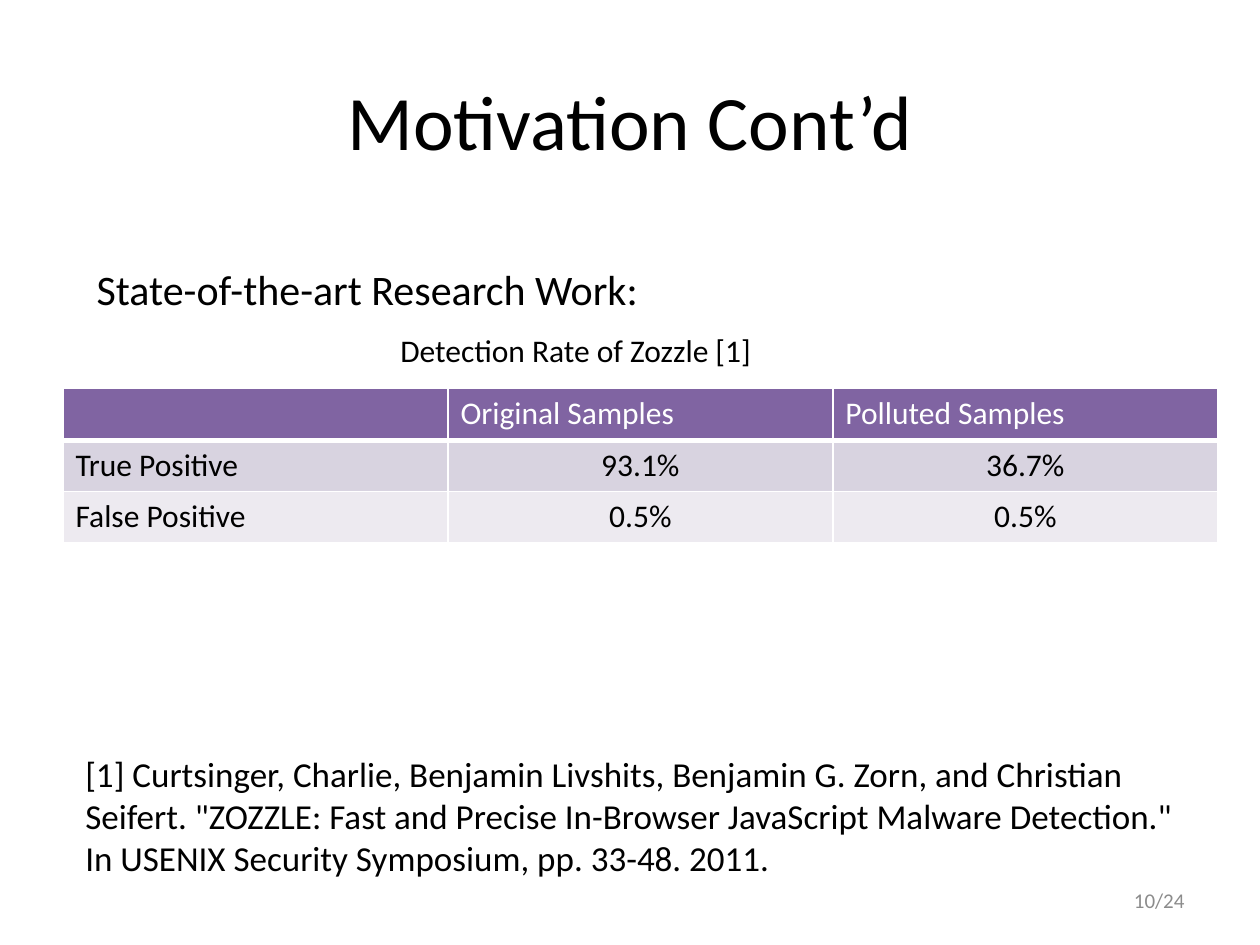
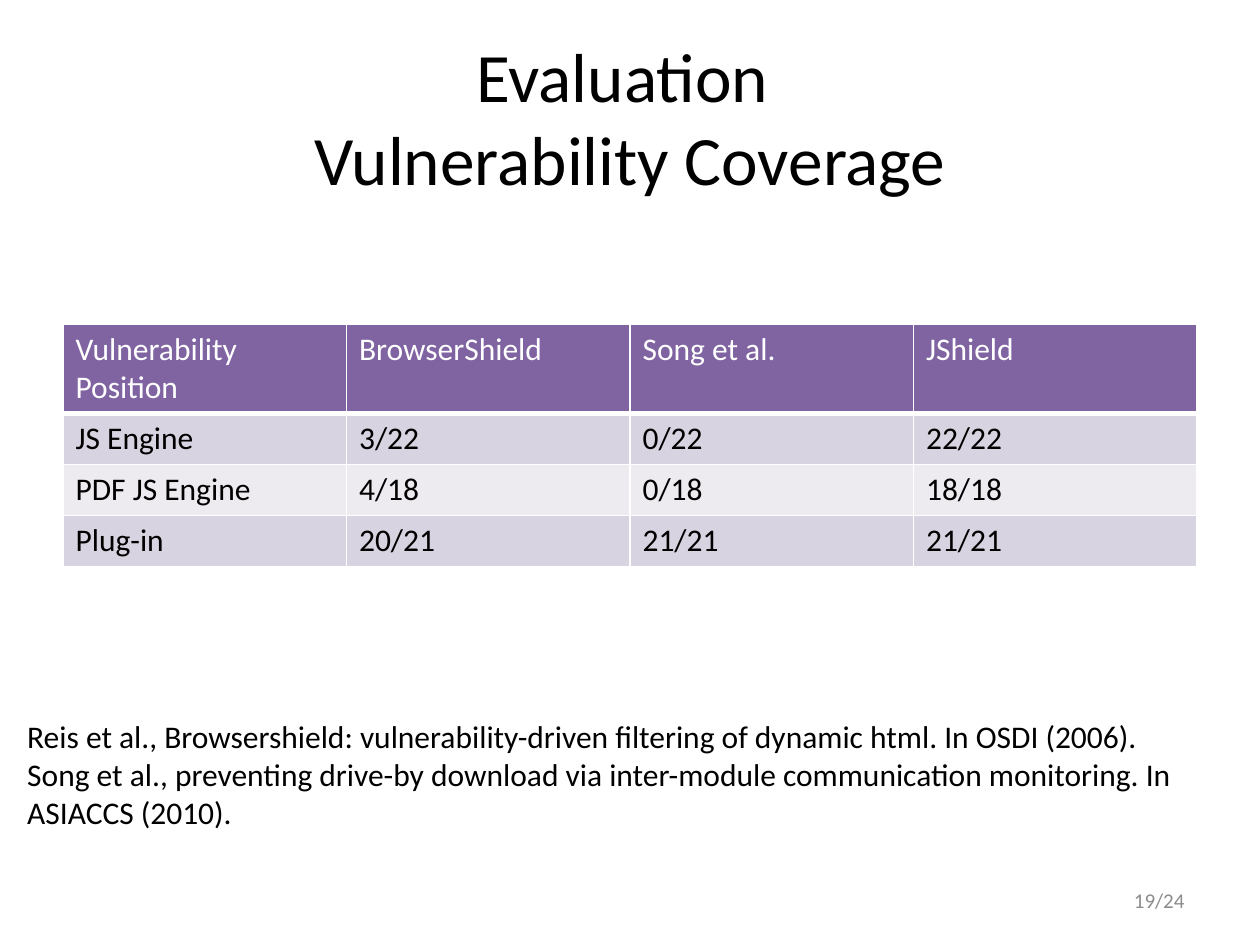
from lxml.etree import SubElement
from pptx import Presentation
from pptx.dml.color import RGBColor
from pptx.enum.text import MSO_ANCHOR as Anchor, PP_ALIGN as Align
from pptx.oxml.ns import qn
from pptx.util import Cm, Pt

FONT = "Calibri"
BLACK, WHITE, GREY = "000000", "FFFFFF", "8C8C8C"
HEADER_FILL, BAND_FILLS = "8064A2", ("D8D3E0", "EDEAF0")
ROW_HEIGHT = 1.03
BORDERS = ("lnL", "lnR", "lnT", "lnB")

# Content: boxes and tables are placed in centimetres
PAGES = [
    {
        "title": "Motivation Cont’d", "title_top": 0.83, "title_size": 44,
        "number": "10/24",
        "table": {
            "place": (1.27, 7.83, 23.28), "header_height": 1.05,
            "value_align": Align.CENTER,
            "rows": [
                ("", "Original Samples", "Polluted Samples"),
                ("True Positive", "93.1%", "36.7%"),
                ("False Positive", "0.5%", "0.5%"),
            ],
        },
        "notes": [
            ((7.82, 6.55, 10.36, 0.94), 18, ["Detection Rate of Zozzle [1]"]),
            ((1.7, 5.18, 13.13, 1.17), 24, ["State-of-the-art Research Work:"]),
            ((1.47, 15.04, 22.86, 2.57), 20, [
                "[1] Curtsinger, Charlie, Benjamin Livshits, Benjamin G. Zorn, "
                "and Christian Seifert. \"ZOZZLE: Fast and Precise In-Browser "
                "JavaScript Malware Detection.\" In USENIX Security Symposium, "
                "pp. 33-48. 2011."]),
        ],
    },
    {
        "title": "Evaluation \vVulnerability Coverage", "title_top": 0.76, "title_size": 39.6,
        "number": "19/24",
        "table": {
            "place": (1.27, 6.53, 22.86), "header_height": 1.8,
            "value_align": Align.LEFT,
            "rows": [
                ("Vulnerability Position", "BrowserShield", "Song et al.", "JShield"),
                ("JS Engine", "3/22", "0/22", "22/22"),
                ("PDF JS Engine", "4/18", "0/18", "18/18"),
                ("Plug-in", "20/21", "21/21", "21/21"),
            ],
        },
        "notes": [
            ((0.3, 14.33, 24.87, 2.57), 18, [
                "Reis et al., Browsershield: vulnerability-driven filtering of "
                "dynamic html. In OSDI (2006).",
                "Song et al., preventing drive-by download via inter-module "
                "communication monitoring. In ASIACCS (2010)."]),
        ],
    },
]


def rgb(code):
    return RGBColor.from_string(code)


def write(para, text, size, color=BLACK, align=Align.LEFT):
    para.text = text
    para.alignment = align
    para.font.color.rgb = rgb(color)
    for name, value in {"name": FONT, "size": Pt(size)}.items():
        setattr(para.font, name, value)
    for span in para.runs:
        span.font.color.rgb = rgb(color)
        for name, value in {"name": FONT, "size": Pt(size)}.items():
            setattr(span.font, name, value)


def add_text(page, place, lines, size, anchor=Anchor.TOP, **style):
    frame = page.shapes.add_textbox(*map(Cm, place)).text_frame
    for name, value in {"word_wrap": True, "vertical_anchor": anchor}.items():
        setattr(frame, name, value)
    for index, line in enumerate(lines):
        para = frame.add_paragraph() if index else frame.paragraphs[0]
        write(para, line, size, **style)


def set_borders(cell, bottom):
    # Border elements must stand before the fill, so set them first
    properties = cell._tc.get_or_add_tcPr()
    for tag in BORDERS:
        width = bottom if tag == "lnB" else 1
        line = SubElement(properties, qn(f"a:{tag}"), w=str(Pt(width)))
        fill = SubElement(line, qn("a:solidFill"))
        SubElement(fill, qn("a:srgbClr"), val=WHITE)


def add_grid(page, place, header_height, value_align, rows):
    left, top, width = place
    heights = [header_height] + [ROW_HEIGHT] * (len(rows) - 1)
    columns = len(rows[0])
    table = page.shapes.add_table(len(rows), columns, Cm(left), Cm(top),
                                  Cm(width), Cm(sum(heights))).table
    for name in ("first_row", "horz_banding"):
        setattr(table, name, False)
    for column in table.columns:
        column.width = Cm(width / columns)
    for r, row in enumerate(rows):
        table.rows[r].height = Cm(heights[r])
        for c, text in enumerate(row):
            cell = table.cell(r, c)
            set_borders(cell, 1 if r else 3)
            cell.fill.solid()
            cell.fill.fore_color.rgb = rgb(BAND_FILLS[(r - 1) % 2] if r else HEADER_FILL)
            write(cell.text_frame.paragraphs[0], text, 18, BLACK if r else WHITE,
                  value_align if r and c else Align.LEFT)


def build(deck, content):
    page = deck.slides.add_slide(deck.slide_layouts[6])
    # Title and page number
    add_text(page, (1.27, content["title_top"], 22.86, 3.18), [content["title"]],
             content["title_size"], Anchor.MIDDLE, align=Align.CENTER)
    add_text(page, (18.2, 17.65, 5.93, 1.01), [content["number"]], 12,
             Anchor.MIDDLE, color=GREY, align=Align.RIGHT)
    # Results and references
    add_grid(page, **content["table"])
    for place, size, lines in content["notes"]:
        add_text(page, place, lines, size)


def main():
    deck = Presentation()
    deck.slide_width, deck.slide_height = Cm(25.4), Cm(19.05)
    for content in PAGES:
        build(deck, content)
    deck.save("out.pptx")


if __name__ == "__main__":
    main()
